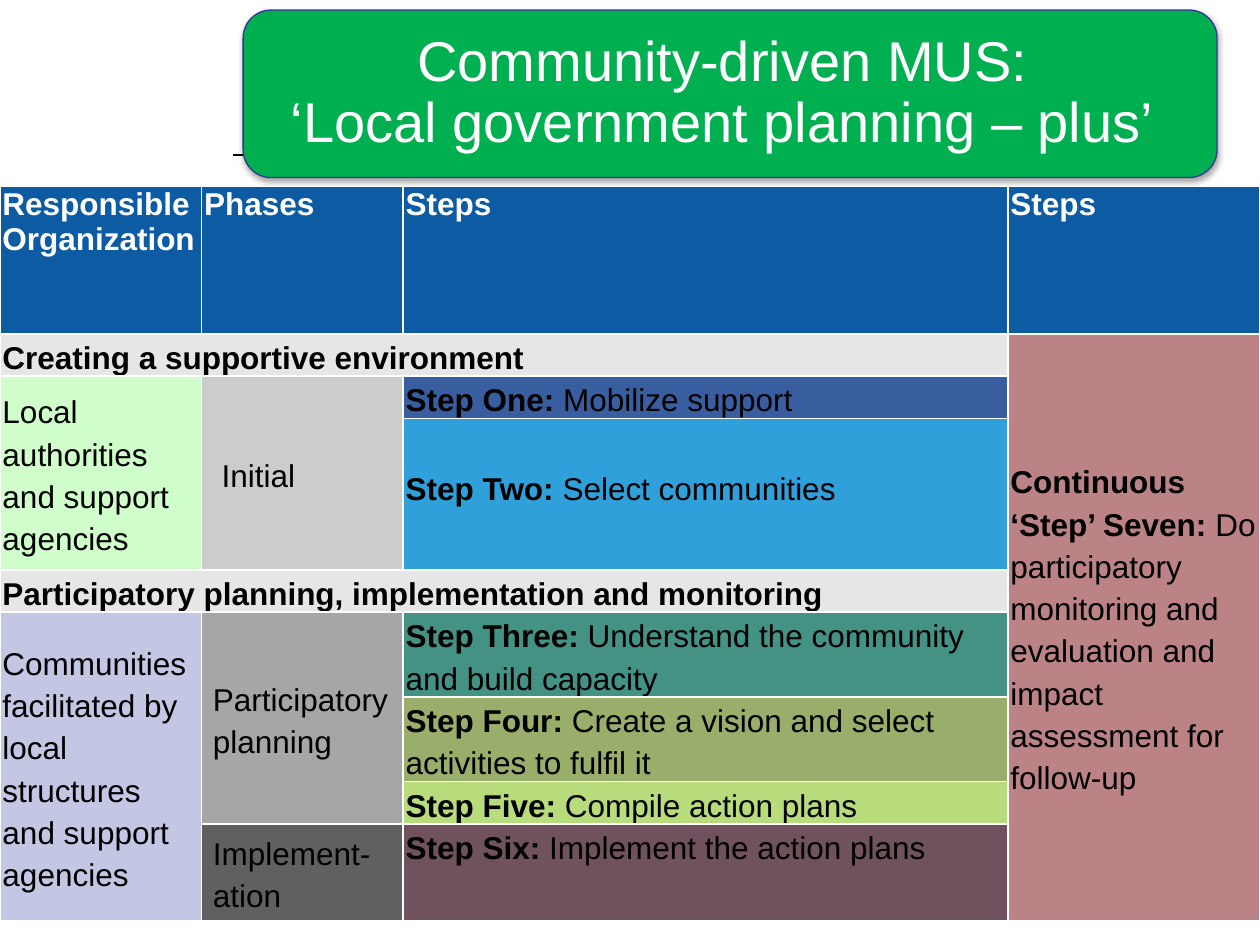
from lxml import etree
from pptx import Presentation
from pptx.dml.color import RGBColor
from pptx.enum.shapes import MSO_CONNECTOR, MSO_SHAPE
from pptx.enum.text import MSO_ANCHOR, MSO_AUTO_SIZE, PP_ALIGN
from pptx.oxml import parse_xml
from pptx.oxml.ns import nsdecls, qn
from pptx.util import Inches, Pt

COLS = [1.6, 1.6, 4.8, 2]
ROWS = [1.17, 0.32, 0.32, 1.2, 0.32, 0.67, 0.67, 0.32, 0.77]
HEADERS = ["Responsible Organization", "Phases", "Steps", "Steps"]

# Section bands: row, bold text
BANDS = [
    (1, "Creating a supportive environment"),
    (4, "Participatory planning, implementation and monitoring"),
]
# Organizations and phases: row, column, rows spanned, text, fill, left margin
GROUPS = [
    (2, 0, 2, "Local authorities and support agencies", "CFFECB", 0.02),
    (2, 1, 2, "Initial", "CCCCCC", 0.16),
    (5, 0, 4, "Communities facilitated by local structures and support agencies",
     "C3C7E4", 0.02),
    (5, 1, 3, "Participatory\vplanning", "A6A6A6", 0.09),
    (8, 1, 1, "Implement-\vation", "606060", 0.09),
]
# Steps: row, bold label, description, fill, top margin
STEPS = [
    (2, "Step One:", " Mobilize support", "395E9F", 0),
    (3, "Step Two:", " Select communities", "2FA0D9", 0.37),
    (5, "Step Three:", " Understand the community and build capacity", "449284", 0),
    (6, "Step Four:", " Create a vision and select activities to fulfil it", "99AE6A", 0),
    (7, "Step Five:", " Compile action plans", "B8DB7C", 0),
    (8, "Step Six:", " Implement the action plans", "6F525E", 0),
]


def rgb(value):
    return RGBColor.from_string(value)


def write(tf, bold="", plain="", size=18, color="000000", spacing=1.2,
          align=PP_ALIGN.LEFT):
    """Fill one paragraph with a bold part followed by a plain part."""
    tf.word_wrap = True
    p = tf.paragraphs[0]
    p.alignment, p.line_spacing = align, spacing
    p.space_before = p.space_after = Pt(0)
    for text, is_bold in ((bold, True), (plain, False)):
        for i, part in enumerate(text.split("\v") if text else []):
            if i:
                p.add_line_break()
            r = p.add_run()
            r.text = part
            r.font.name, r.font.size, r.font.bold = "Arial", Pt(size), is_bold
            r.font.color.rgb = rgb(color)


class Deck:
    border = "FFFFFF"

    def __init__(self, prs):
        self.s = prs.slides.add_slide(prs.slide_layouts[5])

    def rule(self, x1, x2, y):
        line = self.s.shapes.add_connector(
            MSO_CONNECTOR.STRAIGHT, Inches(x1), Inches(y), Inches(x2), Inches(y))
        line.line.color.rgb, line.line.width = rgb("000000"), Pt(0.75)
        etree.SubElement(line._element.spPr, qn("a:effectLst"))

    def banner(self, x, y, w, h, fill, outline):
        sp = self.s.shapes.add_shape(
            MSO_SHAPE.ROUNDED_RECTANGLE, Inches(x), Inches(y), Inches(w), Inches(h))
        sp.fill.solid()
        sp.fill.fore_color.rgb = rgb(fill)
        sp.line.color.rgb, sp.line.width = rgb(outline), Pt(0.75)
        sp._element.spPr.append(parse_xml(
            f'<a:effectLst {nsdecls("a")}><a:outerShdw blurRad="40000" dist="23000" '
            'dir="5400000" rotWithShape="0"><a:srgbClr val="000000">'
            '<a:alpha val="35000"/></a:srgbClr></a:outerShdw></a:effectLst>'))

    def title(self, x, y, w, h, text):
        sp = self.s.shapes.title
        sp.left, sp.top, sp.width, sp.height = map(Inches, (x, y, w, h))
        tf = sp.text_frame
        tf.auto_size, tf.vertical_anchor = MSO_AUTO_SIZE.NONE, MSO_ANCHOR.MIDDLE
        tf.margin_left = tf.margin_top = tf.margin_bottom = Inches(0.13)
        tf.margin_right = Inches(0.25)
        write(tf, plain=text, size=32, color="FFFFFF", spacing=0.9,
              align=PP_ALIGN.CENTER)
        # Bring the title in front of the banner
        sp._element.getparent().append(sp._element)

    def table(self, x, y, cols, rows):
        tbl = self.s.shapes.add_table(
            len(rows), len(cols), Inches(x), Inches(y),
            Inches(sum(cols)), Inches(sum(rows))).table
        tbl.first_row = tbl.horz_banding = False
        for column, width in zip(tbl.columns, cols):
            column.width = Inches(width)
        for row, height in zip(tbl.rows, rows):
            row.height = Inches(height)
        for cell in tbl.iter_cells():
            tc_pr = cell._tc.get_or_add_tcPr()
            for side in ("lnL", "lnR", "lnT", "lnB"):
                tc_pr.append(parse_xml(
                    f'<a:{side} {nsdecls("a")} w="12700"><a:solidFill>'
                    f'<a:srgbClr val="{self.border}"/></a:solidFill></a:{side}>'))
        self.tbl = tbl

    def cell(self, row, col, fill, bold="", plain="", span=(1, 1), left=0.02,
             top=0, anchor=MSO_ANCHOR.TOP, **fmt):
        cell = self.tbl.cell(row, col)
        if span != (1, 1):
            cell.merge(self.tbl.cell(row + span[0] - 1, col + span[1] - 1))
        cell.fill.solid()
        cell.fill.fore_color.rgb = rgb(fill)
        cell.margin_left, cell.margin_right = Inches(left), Inches(0.02)
        cell.margin_top, cell.margin_bottom = Inches(top), Inches(0)
        cell.vertical_anchor = anchor
        write(cell.text_frame, bold, plain, **fmt)


def main():
    prs = Presentation()
    prs.slide_width, prs.slide_height = Inches(10), Inches(7.5)
    deck = Deck(prs)

    # Title banner
    box = (1.93, 0.08, 7.73, 1.33)
    deck.rule(1.85, 9.17, 1.23)
    deck.banner(*box, fill="00B050", outline="333399")
    deck.title(*box, "Community-driven MUS:\v‘Local government planning – plus’")

    # Planning table
    deck.table(0, 1.48, COLS, ROWS)
    for col, text in enumerate(HEADERS):
        deck.cell(0, col, "0D5CA3", text, color="FFFFFF", spacing=1)
    for row, text in BANDS:
        deck.cell(row, 0, "E6E6E6", text, span=(1, 3))
    for row, col, height, text, fill, left in GROUPS:
        deck.cell(row, col, fill, plain=text, span=(height, 1), left=left,
                  anchor=MSO_ANCHOR.MIDDLE)
    for row, label, text, fill, top in STEPS:
        deck.cell(row, 2, fill, label, text, top=top)
    deck.cell(1, 3, "BC8386", "Continuous ‘Step’ Seven:",
              " Do participatory monitoring and evaluation and impact "
              "assessment for follow-up", span=(8, 1), anchor=MSO_ANCHOR.MIDDLE)

    prs.save("out.pptx")


if __name__ == "__main__":
    main()
